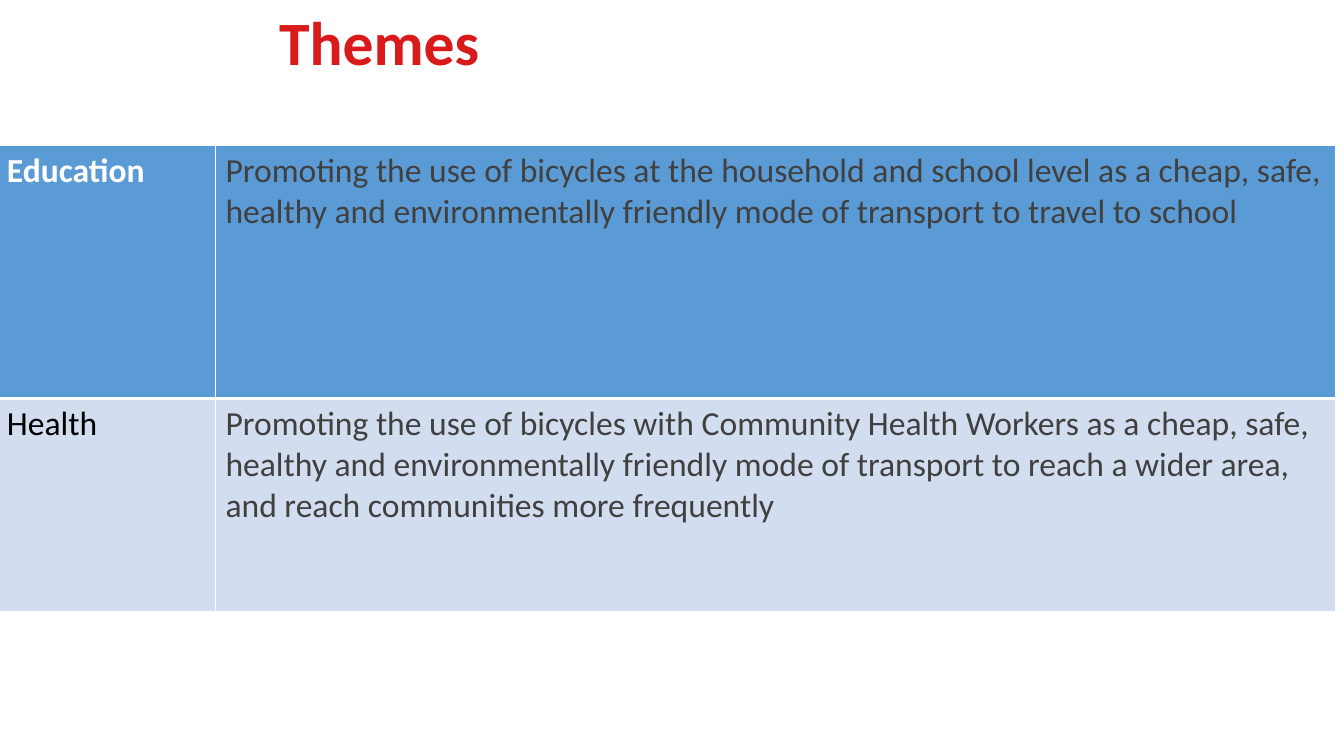
import pptx
import pptx.util
import pptx.dml.color
import pptx.enum.text
import pptx.oxml
import pptx.oxml.ns
from pptx.util import Cm, Pt

TITLE = "Themes"
FONT = "Calibri"
# theme, description, fill, theme colour, theme bold, bottom border (pt), height (cm)
THEMES = [
    ("Education",
     "Promoting the use of bicycles at the household and school level as a cheap, safe, "
     "healthy and environmentally friendly mode of transport to travel to school",
     "5B9BD5", "FFFFFF", True, 3, 6.38),
    ("Health",
     "Promoting the use of bicycles with Community Health Workers as a cheap, safe, "
     "healthy and environmentally friendly mode of transport to reach a wider area, "
     "and reach communities more frequently",
     "D2DEEF", "000000", False, 1, 5.36),
]
COL_WIDTHS = [5.51, 28.24]


def rgb(value):
    return pptx.dml.color.RGBColor.from_string(value)


def set_font(p, size, color, bold):
    p.font.name = FONT
    p.font.size = Pt(size)
    p.font.bold = bold
    p.font.color.rgb = rgb(color)


def set_borders(cell, bottom, top):
    """Draw white borders; they come before the fill in the cell properties."""
    tcPr = cell._tc.get_or_add_tcPr()
    for i, (side, width) in enumerate([("L", 1), ("R", 1), ("T", top), ("B", bottom)]):
        tcPr.insert(i, pptx.oxml.parse_xml(
            f'<a:ln{side} {pptx.oxml.ns.nsdecls("a")} w="{Pt(width)}">'
            f'<a:solidFill><a:srgbClr val="FFFFFF"/></a:solidFill></a:ln{side}>'))


prs = pptx.Presentation()
prs.slide_width, prs.slide_height = Cm(33.87), Cm(19.05)
slide = prs.slides.add_slide(prs.slide_layouts[5])

# Title
title = slide.shapes.title
title.left, title.top, title.width, title.height = Cm(6.78), Cm(0.51), Cm(24), Cm(1.27)
tf = title.text_frame
tf.text = TITLE
tf.auto_size = pptx.enum.text.MSO_AUTO_SIZE.NONE
tf.vertical_anchor = pptx.enum.text.MSO_ANCHOR.MIDDLE
p = tf.paragraphs[0]
p.alignment = pptx.enum.text.PP_ALIGN.LEFT
p.line_spacing = 0.9
set_font(p, 44, "D81A1A", True)

# Table of themes
heights = [row[-1] for row in THEMES]
table = slide.shapes.add_table(len(THEMES), len(COL_WIDTHS), Cm(-0.08), Cm(3.66),
                               Cm(sum(COL_WIDTHS)), Cm(sum(heights))).table
for column, width in zip(table.columns, COL_WIDTHS):
    column.width = Cm(width)

top = 1
for r, (theme, description, fill, color, bold, bottom, height) in enumerate(THEMES):
    table.rows[r].height = Cm(height)
    texts = [(theme, color, bold), (description, "404040", False)]
    for c, (text, text_color, text_bold) in enumerate(texts):
        cell = table.cell(r, c)
        cell.text = text
        cell.fill.solid()
        cell.fill.fore_color.rgb = rgb(fill)
        set_borders(cell, bottom, top)
        set_font(cell.text_frame.paragraphs[0], 24, text_color, text_bold)
    top = bottom

prs.save("out.pptx")
